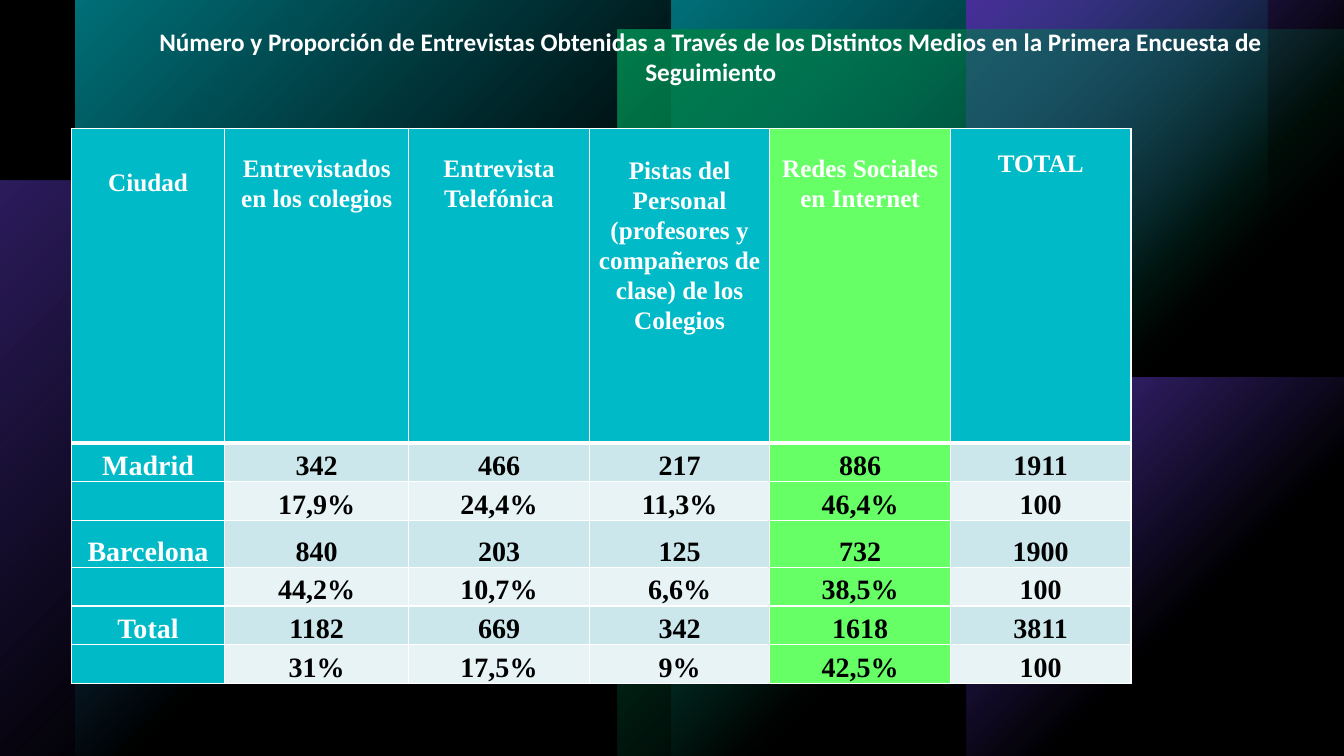
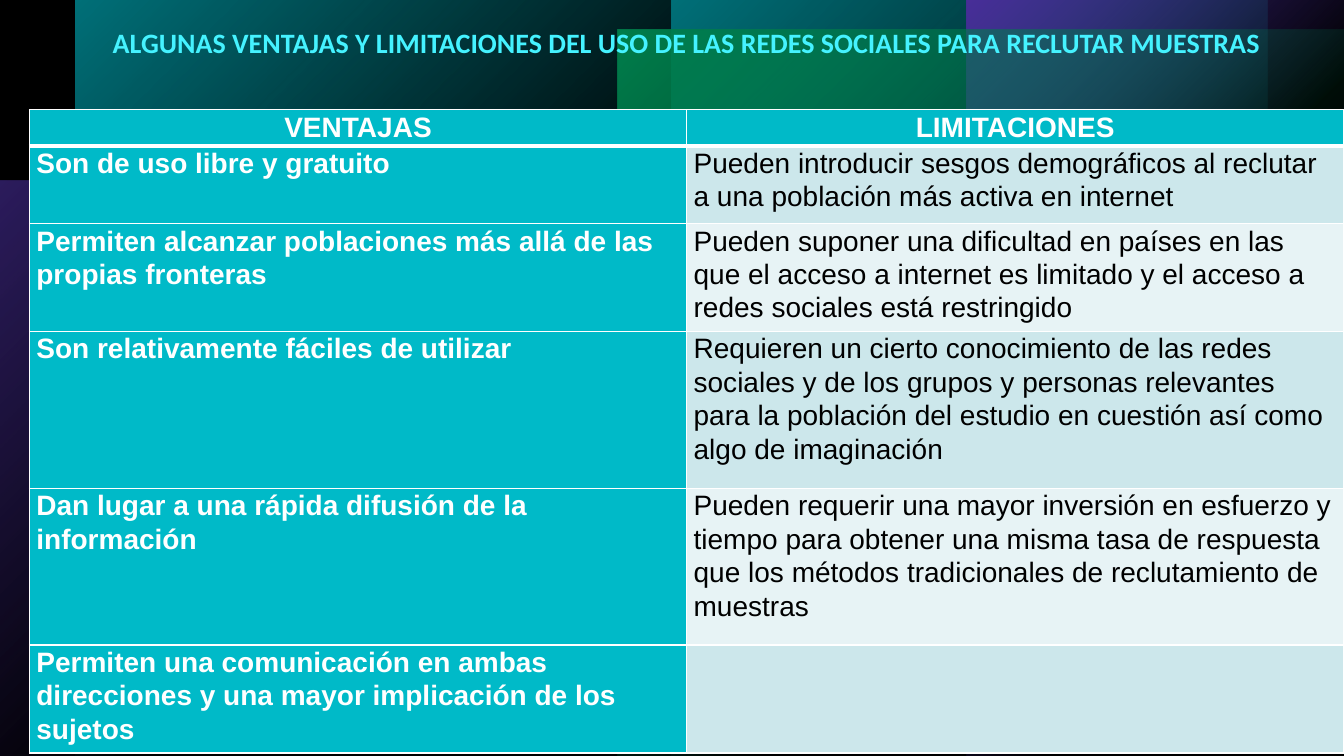
from lxml import etree
from pptx import Presentation
from pptx.dml.color import RGBColor
from pptx.enum.shapes import MSO_SHAPE
from pptx.enum.text import MSO_ANCHOR, PP_ALIGN
from pptx.oxml import parse_xml
from pptx.oxml.ns import nsdecls, qn
from pptx.util import Pt

BLACK = RGBColor(0x00, 0x00, 0x00)
WHITE = RGBColor(0xFF, 0xFF, 0xFF)
TEAL = RGBColor(0x00, 0xBA, 0xC8)
VIOLET = RGBColor(0x79, 0x4D, 0xFF)
GREEN = RGBColor(0x00, 0xD1, 0x7D)
LIME = RGBColor(0x66, 0xFF, 0x66)
CYAN = RGBColor(0x45, 0xF2, 0xFF)
BANDS = (RGBColor(0xCC, 0xE7, 0xEB), RGBColor(0xE7, 0xF3, 0xF5))

SLIDE_W, SLIDE_H = 960, 540
TITLE_FONT = "Calibri"

# Backdrop glows: left, top, width, height, rotation, flipped, colour, opacity
GLOWS = [
    (0, 129, 411, 411, 270, False, VIOLET, 60),
    (479.5, 0, 425.5, 540, 0, False, TEAL, 100),
    (54, 0, 425.5, 540, 0, True, TEAL, 100),
    (690, 270, 270, 270, 90, False, VIOLET, 100),
    (690, 0, 270, 270, 90, True, VIOLET, 100),
    (441, 21, 519, 519, 180, False, GREEN, 100),
]

# Survey table: header text with its distance from the top of the cell
SURVEY_HEADER = [
    ("Ciudad", 28),
    ("Entrevistados en los colegios", 18),
    ("Entrevista Telefónica", 18),
    ("Pistas del Personal (profesores y compañeros de clase) de los Colegios", 19.5),
    ("Redes Sociales en Internet", 18),
    ("TOTAL", 14),
]
SURVEY_ROWS = [
    ("Madrid", "342", "466", "217", "886", "1911"),
    ("", "17,9%", "24,4%", "11,3%", "46,4%", "100"),
    ("Barcelona", "840", "203", "125", "732", "1900"),
    ("", "44,2%", "10,7%", "6,6%", "38,5%", "100"),
    ("Total", "1182", "669", "342", "1618", "3811"),
    ("", "31%", "17,5%", "9%", "42,5%", "100"),
]
SURVEY_COLS = [109.5, 131.5] + [129] * 4
SURVEY_HEIGHTS = [225, 25.5, 25.5, 33.5, 25.5, 25.5, 25.5]
NETWORKS_COL = 4

COMPARISON_ROWS = [
    ("VENTAJAS", "LIMITACIONES"),
    ("Son de uso libre y gratuito",
     "Pueden introducir sesgos demográficos al reclutar a una población más activa "
     "en internet"),
    ("Permiten alcanzar poblaciones más allá de las propias fronteras",
     "Pueden suponer una dificultad en países en las que el acceso a internet es "
     "limitado y el acceso a redes sociales está restringido"),
    ("Son relativamente fáciles de utilizar",
     "Requieren un cierto conocimiento de las redes sociales y de los grupos y "
     "personas relevantes para la población del estudio en cuestión así como algo "
     "de imaginación"),
    ("Dan lugar a una rápida difusión de la información",
     "Pueden requerir una mayor inversión en esfuerzo y tiempo para obtener una "
     "misma tasa de respuesta que los métodos tradicionales de reclutamiento de "
     "muestras"),
    ("Permiten una comunicación en ambas direcciones y una mayor implicación de "
     "los sujetos", ""),
]
COMPARISON_HEIGHTS = [23.5, 55.5, 74.5, 112, 112, 72]


def set_alpha(sp, percent):
    clr = sp.element.spPr.find(qn("a:solidFill"))[0]
    etree.SubElement(clr, qn("a:alpha")).set("val", str(percent * 1000))


def set_glow(sp, color, opacity):
    """Fill a shape with a colour that fades out from its top left corner."""
    sp.element.spPr.find(qn("a:prstGeom")).addnext(parse_xml(
        f'<a:gradFill {nsdecls("a")} rotWithShape="1"><a:gsLst>'
        f'<a:gs pos="0"><a:srgbClr val="{color}">'
        f'<a:alpha val="{opacity * 1000}"/></a:srgbClr></a:gs>'
        f'<a:gs pos="60000"><a:srgbClr val="{color}">'
        f'<a:alpha val="0"/></a:srgbClr></a:gs></a:gsLst>'
        f'<a:path path="circle"><a:fillToRect r="100000" b="100000"/></a:path>'
        f'</a:gradFill>'))


def add_rect(s, x, y, w, h):
    sp = s.shapes.add_shape(MSO_SHAPE.RECTANGLE, Pt(x), Pt(y), Pt(w), Pt(h))
    sp.shadow.inherit = False
    sp.line.fill.background()
    return sp


def build_backdrop(master, s):
    """Draw the shared backdrop on a slide and move it to the master."""
    master.background.fill.solid()
    master.background.fill.fore_color.rgb = BLACK
    parts = []
    for x, y, w, h, rotation, flipped, color, opacity in GLOWS:
        sp = add_rect(s, x, y, w, h)
        sp.rotation = rotation
        if flipped:
            sp.element.spPr.find(qn("a:xfrm")).set("flipH", "1")
        set_glow(sp, color, opacity)
        parts.append(sp)

    # Dark veil over the glows
    veil = add_rect(s, 0, 0, SLIDE_W, SLIDE_H)
    veil.fill.solid()
    veil.fill.fore_color.rgb = BLACK
    set_alpha(veil, 40)
    parts.append(veil)

    for number, sp in enumerate(parts, start=101):
        sp.element.nvSpPr.cNvPr.id = number
        master.shapes.element.append(sp.element)


def style_paragraph(p, font, size, color, bold, align):
    p.alignment = align
    p.font.name, p.font.size = font, Pt(size)
    p.font.color.rgb, p.font.bold = color, bold


def add_title(s, box, text, size, color):
    x, y, w, h = box
    tf = s.shapes.add_textbox(Pt(x), Pt(y), Pt(w), Pt(h)).text_frame
    tf.word_wrap = True
    p = tf.paragraphs[0]
    p.text = text
    style_paragraph(p, TITLE_FONT, size, color, True, PP_ALIGN.CENTER)


def add_grid(s, x, y, cols, heights):
    tbl = s.shapes.add_table(len(heights), len(cols), Pt(x), Pt(y),
                             Pt(sum(cols)), Pt(sum(heights))).table
    tbl.first_row = tbl.horz_banding = False
    for col, width in zip(tbl.columns, cols):
        col.width = Pt(width)
    for row, height in zip(tbl.rows, heights):
        row.height = Pt(height)
    return tbl


def set_borders(cell, top, bottom):
    tcPr = cell._tc.get_or_add_tcPr()
    for side, width in (("L", 1), ("R", 1), ("T", top), ("B", bottom)):
        tcPr.append(parse_xml(
            f'<a:ln{side} {nsdecls("a")} w="{Pt(width)}"><a:solidFill>'
            f'<a:srgbClr val="{WHITE}"/></a:solidFill></a:ln{side}>'))


def fill_cell(tbl, row, col, text, fill, font, size, color, bold=True,
              align=PP_ALIGN.CENTER, anchor=MSO_ANCHOR.TOP, spacing=1.07,
              side=5, top=0):
    cell = tbl.cell(row, col)
    set_borders(cell, 3 if row == 1 else 1, 3 if row == 0 else 1)
    cell.fill.solid()
    cell.fill.fore_color.rgb = fill
    cell.margin_left = cell.margin_right = Pt(side)
    cell.margin_top, cell.margin_bottom = Pt(top), 0
    cell.vertical_anchor = anchor
    if text:
        p = cell.text_frame.paragraphs[0]
        p.text = text
        p.line_spacing = spacing
        style_paragraph(p, font, size, color, bold, align)


def add_survey_table(s, x, y):
    font = "Times New Roman"
    tbl = add_grid(s, x, y, SURVEY_COLS, SURVEY_HEIGHTS)
    for c, (text, top) in enumerate(SURVEY_HEADER):
        fill = LIME if c == NETWORKS_COL else TEAL
        fill_cell(tbl, 0, c, text, fill, font, 18, WHITE, side=3.6, top=top)
    for r, values in enumerate(SURVEY_ROWS, start=1):
        fills = {0: TEAL, NETWORKS_COL: LIME}
        for c, text in enumerate(values):
            fill_cell(tbl, r, c, text, fills.get(c, BANDS[(r - 1) % 2]), font, 20,
                      BLACK if c else WHITE, anchor=MSO_ANCHOR.BOTTOM,
                      spacing=1.15, side=3.6)


def add_comparison_table(s, x, y, w):
    tbl = add_grid(s, x, y, [w / 2] * 2, COMPARISON_HEIGHTS)
    for r, values in enumerate(COMPARISON_ROWS):
        for c, text in enumerate(values):
            strong = r == 0 or c == 0
            fill_cell(tbl, r, c, text, TEAL if strong else BANDS[(r - 1) % 2],
                      "Arial", 20, WHITE if strong else BLACK, bold=strong,
                      align=PP_ALIGN.LEFT if r else PP_ALIGN.CENTER)


def main():
    prs = Presentation()
    prs.slide_width, prs.slide_height = Pt(SLIDE_W), Pt(SLIDE_H)
    blank = prs.slide_layouts[6]

    # Survey results
    s = prs.slides.add_slide(blank)
    build_backdrop(prs.slide_master, s)
    add_title(s, (86.5, 15, 842.5, 65.5),
              "Número y Proporción de Entrevistas Obtenidas a Través de los Distintos "
              "Medios en la Primera Encuesta de Seguimiento", 18, WHITE)
    add_survey_table(s, 51, 91.5)

    # Advantages and limitations
    s = prs.slides.add_slide(blank)
    add_title(s, (52.5, 14.5, 876, 55.5),
              "ALGUNAS VENTAJAS Y LIMITACIONES DEL USO DE LAS REDES SOCIALES PARA "
              "RECLUTAR MUESTRAS", 20, CYAN)
    add_comparison_table(s, 21, 78.5, 939)

    prs.save("out.pptx")


if __name__ == "__main__":
    main()
